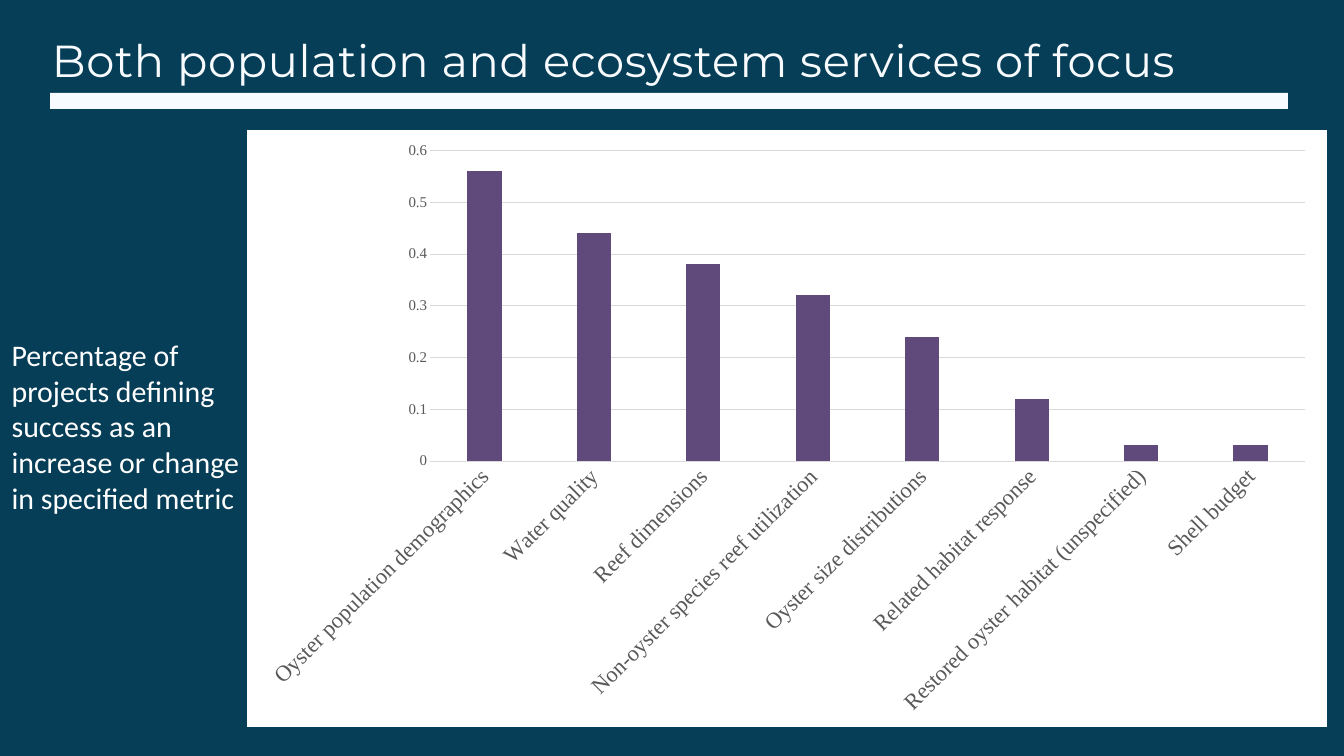
from lxml import etree
from pptx import Presentation
from pptx.chart.data import CategoryChartData
from pptx.dml.color import RGBColor
from pptx.enum.chart import XL_CHART_TYPE, XL_TICK_MARK
from pptx.enum.shapes import MSO_SHAPE
from pptx.enum.text import MSO_AUTO_SIZE
from pptx.oxml import parse_xml
from pptx.oxml.ns import nsdecls, qn
from pptx.util import Pt

COLUMNS = XL_CHART_TYPE.COLUMN_CLUSTERED
NO_TICKS = XL_TICK_MARK.NONE
RECTANGLE = MSO_SHAPE.RECTANGLE
GROW = MSO_AUTO_SIZE.SHAPE_TO_FIT_TEXT
SCALE = 914400 / 67.2
OFF_WHITE = "F8FBFD"
GRID_GREY = "D9D9D9"


def px(*lengths):
    return [round(length * SCALE) for length in lengths]


def style(font, name, size, color):
    font.name = name
    font.size = Pt(size)
    font.color.rgb = RGBColor.from_string(color)


prs = Presentation()
prs.slide_width, prs.slide_height = px(1344, 756)
slide = prs.slides.add_slide(prs.slide_layouts[6])
slide.background.fill.solid()
slide.background.fill.fore_color.rgb = RGBColor.from_string("073E57")

headline = slide.shapes.add_textbox(*px(52, -2, 1201, 76)).text_frame
headline.margin_left = headline.margin_top = headline.margin_right = headline.margin_bottom = 0
headline.word_wrap = True
headline.auto_size = GROW
headline_line = headline.paragraphs[0]
headline_line.text = "Both population and ecosystem services of focus"
headline_line.line_spacing = Pt(94.5)
style(headline_line.font, "Montserrat", 48, OFF_WHITE)
headline_line.runs[0].font.size = Pt(48)
headline_line.runs[0]._r.get_or_add_rPr().set("spc", "70")

rule = slide.shapes.add_shape(RECTANGLE, *px(50, 93, 1238, 16))
rule.shadow.inherit = False
rule.fill.solid()
rule.fill.fore_color.rgb = RGBColor.from_string(OFF_WHITE)
rule.line.fill.background()

measure = slide.shapes.add_textbox(*px(5, 333, 257, 187)).text_frame
measure.word_wrap = True
measure.auto_size = GROW
measure_text = measure.paragraphs[0]
measure_text.text = "Percentage of projects defining success as an increase or change in specified metric"
style(measure_text.font, "Calibri", 32, "FFFFFF")

success_metrics = {
    "Oyster population demographics": 0.56,
    "Water quality": 0.44,
    "Reef dimensions": 0.38,
    "Non-oyster species reef utilization": 0.32,
    "Oyster size distributions": 0.24,
    "Related habitat response": 0.12,
    "Restored oyster habitat (unspecified)": 0.03,
    "Shell budget": 0.03,
}
metric_data = CategoryChartData()
metric_data.categories = list(success_metrics)
metric_data.add_series("Series 1", list(success_metrics.values()))
metrics = slide.shapes.add_chart(COLUMNS, *px(247, 130, 1080, 597), metric_data).chart
metrics.has_legend = False
metrics.has_title = False
style(metrics.font, "Calibri", 10, "000000")

chart_space = metrics.element
backdrop = parse_xml(
    f'<c:spPr {nsdecls("c", "a")}><a:solidFill><a:srgbClr val="FFFFFF"/></a:solidFill>'
    "<a:ln><a:noFill/></a:ln></c:spPr>"
)
chart_space.find(qn("c:txPr")).addprevious(backdrop)

columns = metrics.plots[0]
columns.gap_width = 219
columns.overlap = -27
columns.vary_by_categories = False
column_fill = columns.series[0].format.fill
column_fill.solid()
column_fill.fore_color.rgb = RGBColor.from_string("604A7B")

metric_axis, share_axis = metrics.category_axis, metrics.value_axis
for axis, label_size in ((metric_axis, 24), (share_axis, 16)):
    axis.major_tick_mark = axis.minor_tick_mark = NO_TICKS
    style(axis.tick_labels.font, "Times New Roman", label_size, "595959")
metric_labels = chart_space.find(".//" + qn("c:catAx")).find(qn("c:txPr"))
metric_labels.find(qn("a:bodyPr")).set("rot", "-2700000")

share_axis.minimum_scale = 0
share_axis.maximum_scale = 0.6
share_axis.major_unit = 0.1
share_axis.has_major_gridlines = True
share_axis.format.line.fill.background()
for grey_line in (metric_axis.format.line, share_axis.major_gridlines.format.line):
    grey_line.width = Pt(0.75)
    grey_line.color.rgb = RGBColor.from_string(GRID_GREY)

etree.cleanup_namespaces(backdrop)
prs.save("out.pptx")
